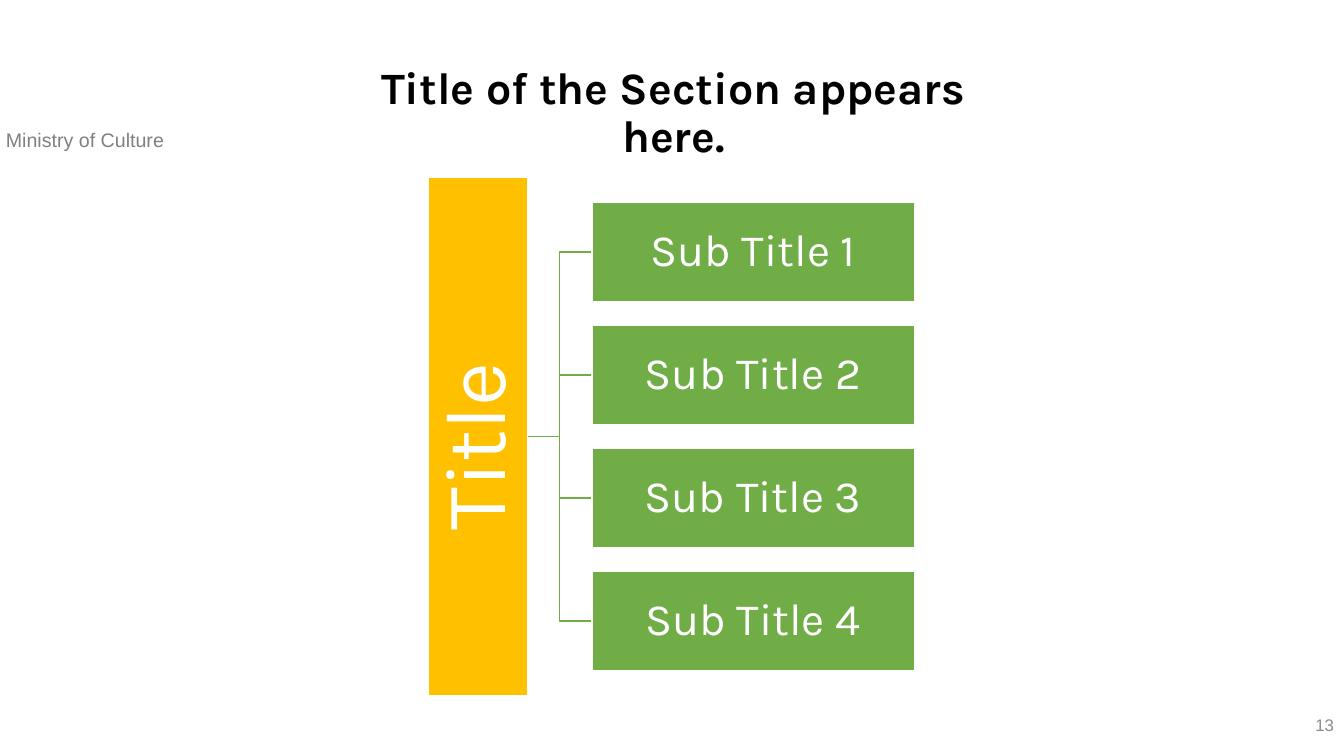
from pptx import Presentation
from pptx.dml.color import RGBColor
from pptx.enum.shapes import MSO_CONNECTOR, MSO_SHAPE
from pptx.enum.text import MSO_ANCHOR, MSO_AUTO_SIZE, PP_ALIGN
from pptx.oxml.ns import qn
from pptx.util import Inches, Pt
from lxml.etree import SubElement

HEADING = "Title of the Section appears here."
MINISTRY = "Ministry of Culture"
PAGE_NUMBER = "13"
ROOT = "Title "
BRANCHES = ["Sub Title 1", "Sub Title 2", "Sub Title 3", "Sub Title 4"]

THEME = {
    "display": "Karla", "body": "Arial",
    "root": "FFC000", "branch": "70AD47", "white": "FFFFFF",
    "black": "000000", "ministry": "808080", "page": "8C8C8C",
    "root_size": 61, "large": 32, "ministry_size": 14, "page_size": 12,
}

BAR_WIDTH, BAR_HEIGHT = 0.98, 5.14
BAR_LEFT, BAR_TOP = 4.25, 1.76
BRANCH_LEFT, BRANCH_WIDTH, BRANCH_HEIGHT = 5.87, 3.2, 0.98
BRANCH_PITCH = 1.22


def color(name):
    return RGBColor.from_string(THEME[name])


def write(frame, text, size, ink, font, align, bold=False, spacing=None):
    frame.word_wrap = True
    frame.text = text
    paragraph = frame.paragraphs[0]
    paragraph.alignment = align
    paragraph.line_spacing = spacing
    paragraph.font.name = THEME[font]
    paragraph.font.size = Pt(THEME[size])
    paragraph.font.color.rgb = color(ink)
    paragraph.font.bold = bold


def add_label(slide, box, *args, **kwargs):
    frame = slide.shapes.add_textbox(*map(Inches, box)).text_frame
    write(frame, *args, **kwargs)
    return frame


def add_block(slide, box, text, fill, size, inset):
    block = slide.shapes.add_shape(MSO_SHAPE.RECTANGLE, *map(Inches, box))
    block.shadow.inherit = False
    block.fill.solid()
    block.fill.fore_color.rgb = color(fill)
    block.line.color.rgb = color("white")
    block.line.width = Pt(1)
    frame = block.text_frame
    frame.margin_left = frame.margin_right = Inches(inset)
    frame.margin_top = frame.margin_bottom = Inches(inset)
    frame.vertical_anchor = MSO_ANCHOR.MIDDLE
    write(frame, text, size, "white", "display", PP_ALIGN.CENTER, spacing=0.9)
    return block


def add_branch_line(slide, root, branch):
    """Join the right of root to the left of branch, behind both."""
    line = slide.shapes.add_connector(MSO_CONNECTOR.ELBOW, 0, 0, 0, 0)
    line.begin_connect(root, 3)
    line.end_connect(branch, 1)
    line.line.color.rgb = color("branch")
    line.line.width = Pt(1)
    SubElement(line.element.spPr, qn("a:effectLst"))
    root.element.addprevious(line.element)


def main():
    deck = Presentation()
    deck.slide_width, deck.slide_height = Inches(13.33), Inches(7.5)
    slide = deck.slides.add_slide(deck.slide_layouts[6])

    add_label(slide, (-0.04, 1.22, 2.9, 0.34), MINISTRY,
              "ministry_size", "ministry", "body", PP_ALIGN.LEFT)
    page = add_label(slide, (10.33, 6.99, 3, 0.4), PAGE_NUMBER,
                     "page_size", "page", "body", PP_ALIGN.RIGHT)
    page.vertical_anchor = MSO_ANCHOR.MIDDLE

    root = add_block(slide, (BAR_LEFT, BAR_TOP, BAR_WIDTH, BAR_HEIGHT),
                     ROOT, "root", "root_size", 0.04)
    root.text_frame._txBody.find(qn("a:bodyPr")).set("vert", "vert270")

    stack_height = BRANCH_PITCH * (len(BRANCHES) - 1) + BRANCH_HEIGHT
    first_top = BAR_TOP + (BAR_HEIGHT - stack_height) / 2
    for index, text in enumerate(BRANCHES):
        top = first_top + index * BRANCH_PITCH
        branch = add_block(slide, (BRANCH_LEFT, top, BRANCH_WIDTH, BRANCH_HEIGHT),
                           text, "branch", "large", 0.02)
        add_branch_line(slide, root, branch)

    heading = add_label(slide, (3.28, 0.6, 6.8, 1.07), HEADING, "large", "black",
                        "display", PP_ALIGN.CENTER, bold=True, spacing=0.9)
    heading.auto_size = MSO_AUTO_SIZE.SHAPE_TO_FIT_TEXT

    deck.save("out.pptx")


if __name__ == "__main__":
    main()
